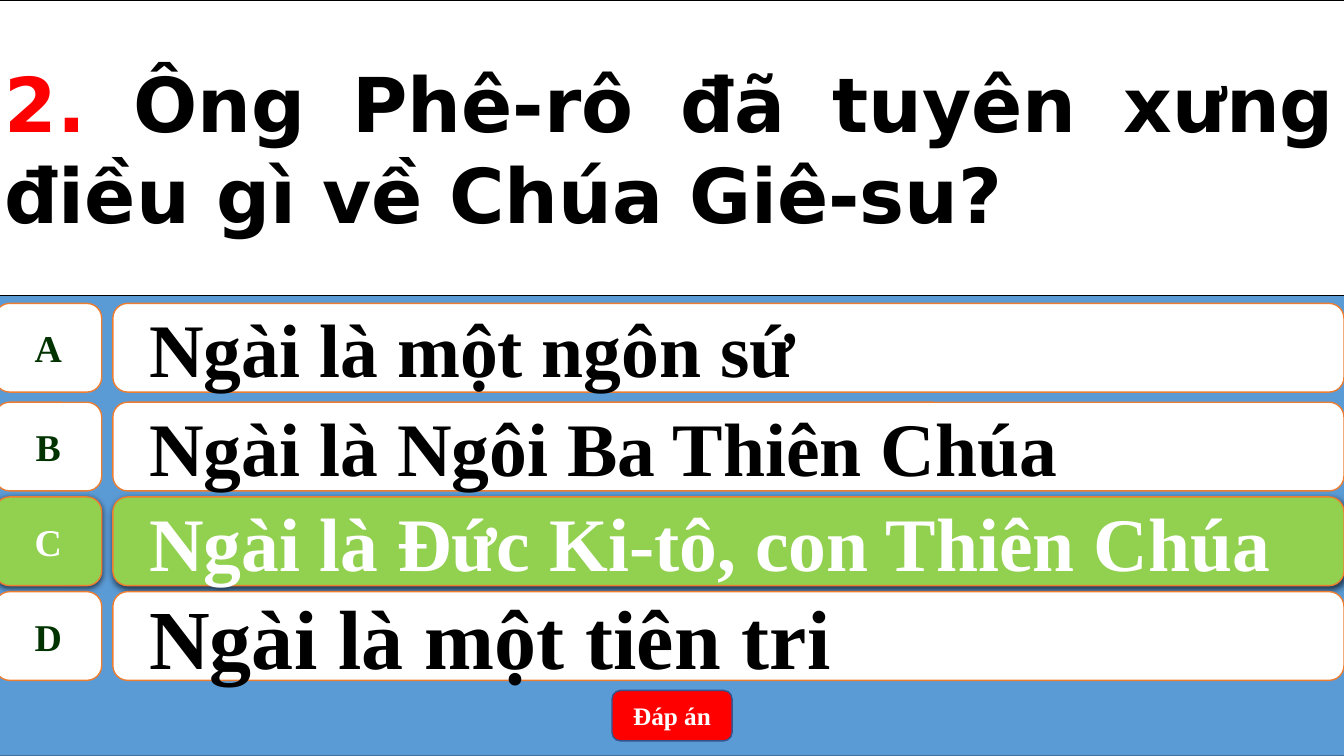
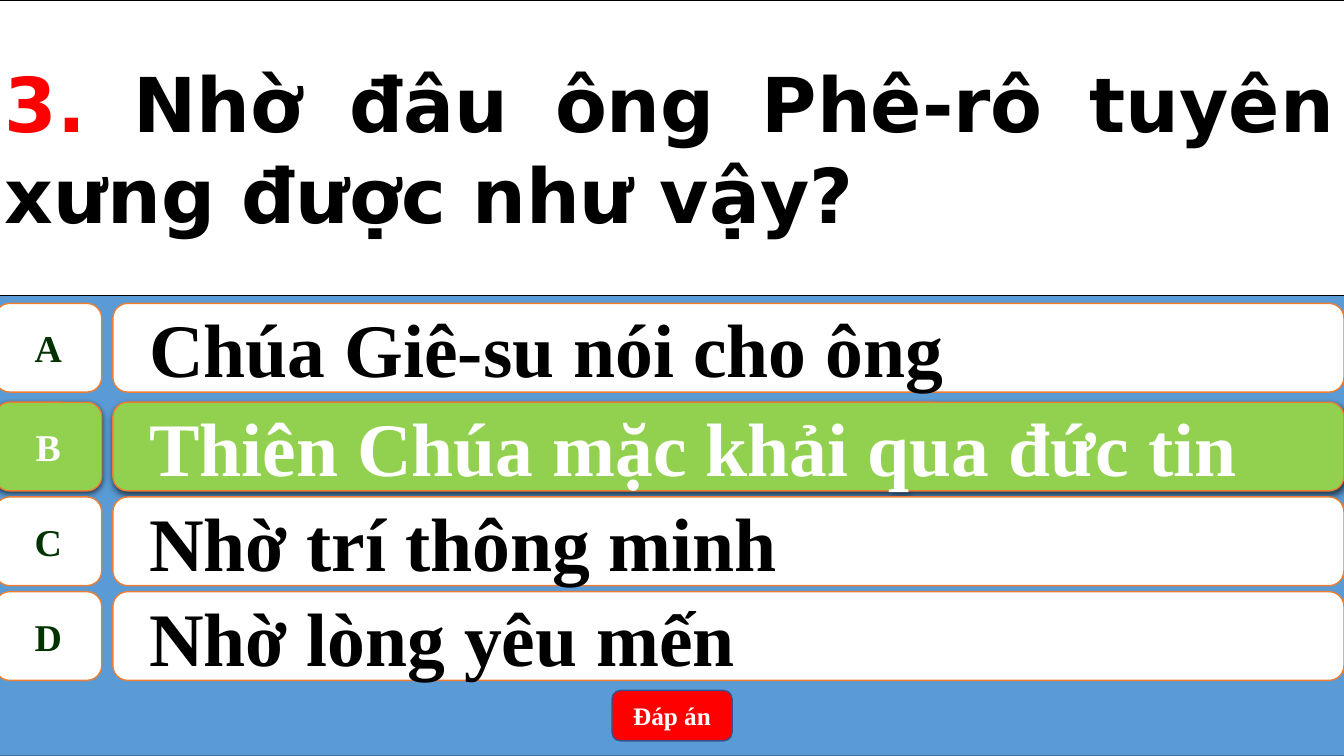
"""Build two quiz slides, each with a question and four answers, one of them marked as right."""
from dataclasses import dataclass

from pptx import Presentation
from pptx.dml.color import RGBColor
from pptx.enum.shapes import MSO_SHAPE
from pptx.enum.text import MSO_ANCHOR, PP_ALIGN
from pptx.oxml import parse_xml
from pptx.oxml.ns import nsdecls, qn
from pptx.util import Inches, Pt

RECT = MSO_SHAPE.RECTANGLE
ROUND = MSO_SHAPE.ROUNDED_RECTANGLE
BADGE = MSO_SHAPE.FLOWCHART_ALTERNATE_PROCESS
MIDDLE = MSO_ANCHOR.MIDDLE
LEFT, CENTER, JUSTIFY = PP_ALIGN.LEFT, PP_ALIGN.CENTER, PP_ALIGN.JUSTIFY


@dataclass(frozen=True)
class Theme:
    """Colours, fonts and type sizes of the quiz."""
    blue: str = "5B9BD5"
    blue_edge: str = "43739E"
    white: str = "FFFFFF"
    black: str = "000000"
    orange: str = "ED7D31"
    green: str = "92D050"
    dark_green: str = "003300"
    red: str = "FF0000"
    button_edge: str = "325491"
    question_font: str = "DejaVu Sans"
    answer_font: str = "Times New Roman"
    question_size: int = 54
    answer_size: int = 54
    letter_size: int = 27
    button_size: int = 18


THEME = Theme()
WIDTH, HEIGHT = Inches(13.33), Inches(7.5)

# Boxes are left, top, width, height in percent of the slide.
PAGE_BOX = (-0.38, 0, 100.45, 100)
QUESTION_BOX = (-0.38, 0, 100.45, 39.07)
BUTTON_BOX = (45.54, 91.33, 8.93, 6.67)
LETTER_COLUMN = (-0.38, 7.95)
ANSWER_COLUMN = (8.4, 91.6)
FIRST_ROW, SECOND_ROW, ROW_PITCH, ROW_HEIGHT = 40.13, 53.2, 12.53, 11.73

QUIZ = [
    ("2. ", "Ông Phê-rô đã tuyên xưng điều gì về Chúa Giê-su?", "C", {
        "A": ("Ngài là một ngôn sứ", THEME.answer_size),
        "B": ("Ngài là Ngôi Ba Thiên Chúa", THEME.answer_size),
        "C": ("Ngài là Đức Ki-tô, con Thiên Chúa", THEME.answer_size),
        "D": ("Ngài là một tiên tri", 60),
    }),
    ("3. ", "Nhờ đâu ông Phê-rô tuyên xưng được như vậy?", "B", {
        "A": ("Chúa Giê-su nói cho ông", THEME.answer_size),
        "B": ("Thiên Chúa mặc khải qua đức tin", THEME.answer_size),
        "C": ("Nhờ trí thông minh", THEME.answer_size),
        "D": ("Nhờ lòng yêu mến", THEME.answer_size),
    }),
]


def add_box(shapes, geometry, box, fill, line):
    """Add a filled, outlined shape placed in percent of the slide."""
    left, top, width, height = box
    sp = shapes.add_shape(geometry, round(left * WIDTH / 100), round(top * HEIGHT / 100),
                          round(width * WIDTH / 100), round(height * HEIGHT / 100))
    sp.shadow.inherit = False
    sp.fill.solid()
    sp.fill.fore_color.rgb = RGBColor.from_string(fill)
    sp.line.color.rgb = RGBColor.from_string(line)
    sp.line.width = Pt(1)
    return sp


def style_run(r, font, size, color):
    """Set the bold type of a run."""
    r.font.name = font
    r.font.size = Pt(size)
    r.font.bold = True
    r.font.color.rgb = RGBColor.from_string(color)


def set_text(sp, text, size, color, font=THEME.answer_font, align=CENTER, wrap=True):
    """Write one vertically centred paragraph and return it."""
    tf = sp.text_frame
    tf.word_wrap = wrap
    tf.vertical_anchor = MIDDLE
    p = tf.paragraphs[0]
    p.text = text
    p.alignment = align
    style_run(p.runs[0], font, size, color)
    return p


def indent(p):
    """Give a paragraph the hanging indent of the answers."""
    p.level = 1
    pPr = p._p.get_or_add_pPr()
    pPr.set("marL", str(Inches(0.5)))
    pPr.set("indent", str(Inches(-0.28)))


def add_shadow(sp):
    """Drop a soft shadow below a shape."""
    sp._element.spPr.find(qn("a:effectLst")).append(parse_xml(
        f'<a:outerShdw {nsdecls("a")} blurRad="{Pt(4.5)}" dist="{Pt(1.5)}" dir="5400000" '
        f'algn="ctr" rotWithShape="0"><a:srgbClr val="{THEME.black}">'
        '<a:alpha val="63000"/></a:srgbClr></a:outerShdw>'))


def add_answer(slide, row, letter, text, size, right):
    """Add a grouped letter and answer, green with a shadow if right."""
    top = SECOND_ROW + (row - 1) * ROW_PITCH if row else FIRST_ROW
    fill = THEME.green if right else THEME.white
    shapes = slide.shapes.add_group_shape().shapes
    badge, bar = (
        add_box(shapes, geometry, (left, top, width, ROW_HEIGHT), fill, THEME.orange)
        for geometry, (left, width) in ((BADGE, LETTER_COLUMN), (ROUND, ANSWER_COLUMN)))
    set_text(badge, letter, THEME.letter_size,
             THEME.white if right else THEME.dark_green, wrap=False)
    indent(set_text(bar, text, size, THEME.white if right else THEME.black, align=LEFT))
    if right:
        add_shadow(badge)
        add_shadow(bar)


def add_question(slide, number, text):
    """Add the question panel with its red number."""
    sp = add_box(slide.shapes, RECT, QUESTION_BOX, THEME.white, THEME.black)
    p = set_text(sp, number, THEME.question_size, THEME.red, THEME.question_font, JUSTIFY)
    r = p.add_run()
    r.text = text
    style_run(r, THEME.question_font, THEME.question_size, THEME.black)


def add_button(slide):
    """Add the red answer button."""
    sp = add_box(slide.shapes, ROUND, BUTTON_BOX, THEME.red, THEME.button_edge)
    set_text(sp, "Đáp án", THEME.button_size, THEME.white)


def add_quiz_slide(prs, number, question, right, answers):
    """Add one slide of the quiz."""
    slide = prs.slides.add_slide(prs.slide_layouts[6])
    add_box(slide.shapes, RECT, PAGE_BOX, THEME.blue, THEME.blue_edge)
    add_question(slide, number, question)
    for row, (letter, (text, size)) in enumerate(answers.items()):
        add_answer(slide, row, letter, text, size, letter == right)
    add_button(slide)


def main():
    """Build and save the presentation."""
    prs = Presentation()
    prs.slide_width, prs.slide_height = WIDTH, HEIGHT
    for number, question, right, answers in QUIZ:
        add_quiz_slide(prs, number, question, right, answers)
    prs.save("out.pptx")


if __name__ == "__main__":
    main()
